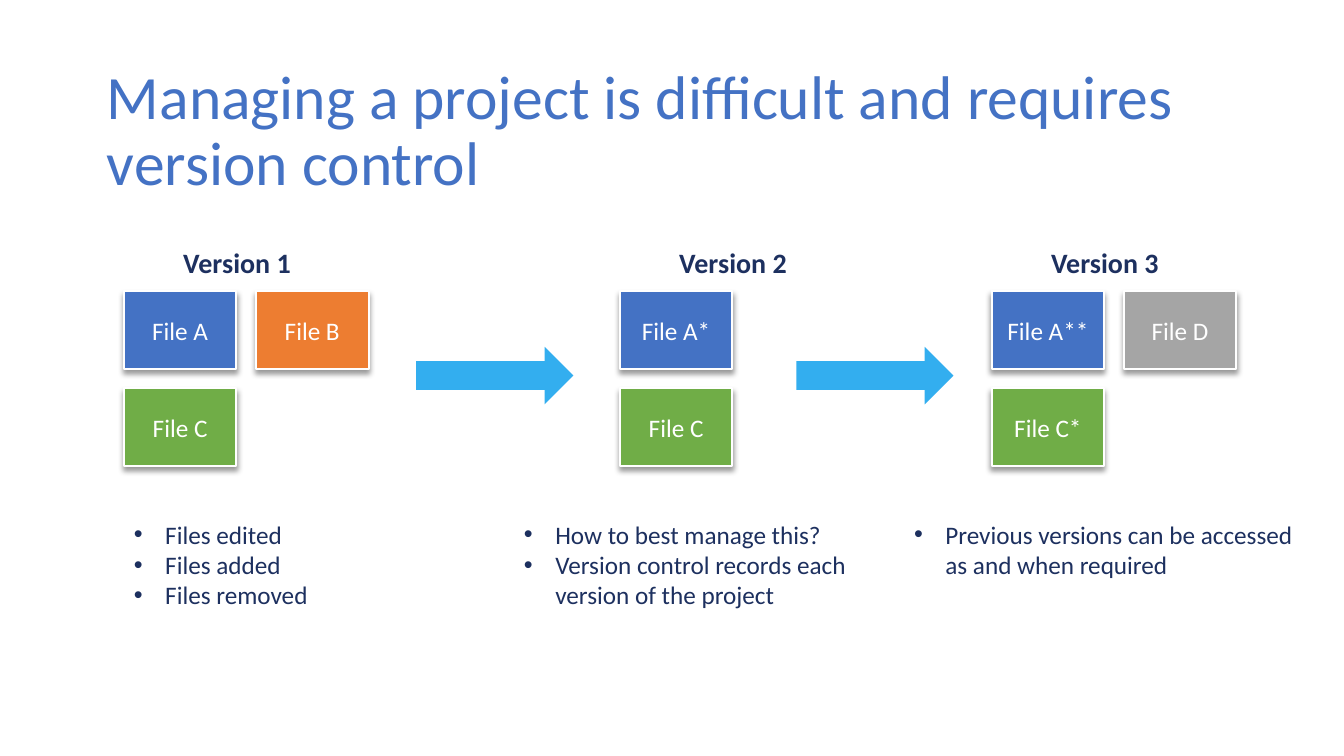
from lxml import etree
from pptx import Presentation
from pptx import util as u
from pptx.dml.color import RGBColor
from pptx.enum import shapes, text
from pptx.oxml.ns import qn

COLORS = {
    "blue": "4472C4", "orange": "ED7D31", "green": "70AD47", "grey": "A5A5A5",
    "arrow": "33AEEF", "navy": "1D305F", "white": "FFFFFF", "shadow": "000000",
}
FONT = "Calibri"
FILE_TOP, FILE_WIDTH, FILE_HEIGHT = 7.34, 2.84, 1.96
COLUMN_STEP, ROW_STEP = 3.33, 2.44

VERSIONS = [
    (3.12, "Version 1", [("File A", "blue", 0, 0), ("File B", "orange", 1, 0),
                         ("File C", "green", 0, 1)]),
    (15.62, "Version 2", [("File A*", "blue", 0, 0), ("File C", "green", 0, 1)]),
    (24.99, "Version 3", [("File A**", "blue", 0, 0), ("File D", "grey", 1, 0),
                          ("File C*", "green", 0, 1)]),
]
ARROW_LEFTS = [10.49, 20.07]
POINTS = [
    "Files edited", "Files added", "Files removed", "How to best manage this?",
    "Version control records each version of the project",
    "Previous versions can be accessed as and when required",
]


def rgb(name):
    return RGBColor.from_string(COLORS[name])


def box(*lengths):
    return [u.Cm(length) for length in lengths]


def place(shape, *lengths):
    shape.left, shape.top, shape.width, shape.height = box(*lengths)


def style(paragraph, size, color, align, bold=False):
    paragraph.alignment = align
    font = paragraph.font
    font.name, font.size, font.bold = FONT, u.Pt(size), bold
    font.color.rgb = rgb(color)


def add_title(slide, words):
    title = slide.shapes.title
    place(title, 2.44, 1.5, 29.21, 3.68)
    frame = title.text_frame
    frame.text = words
    frame.auto_size = text.MSO_AUTO_SIZE.NONE
    frame.vertical_anchor = text.MSO_ANCHOR.MIDDLE
    paragraph = frame.paragraphs[0]
    paragraph.line_spacing = 0.9
    style(paragraph, 44, "blue", text.PP_ALIGN.LEFT)


def add_shadow(shape):
    shape.shadow.inherit = False
    effects = shape._element.spPr.find(qn("a:effectLst"))
    shadow = etree.SubElement(
        effects, qn("a:outerShdw"), blurRad=str(u.Pt(4)), dist=str(u.Pt(3)),
        dir="5400000", algn="ctr", rotWithShape="0")
    color = etree.SubElement(shadow, qn("a:srgbClr"), val=COLORS["shadow"])
    etree.SubElement(color, qn("a:alpha"), val="40000")


def add_file(slide, left, top, name, color):
    shape = slide.shapes.add_shape(
        shapes.MSO_SHAPE.RECTANGLE, *box(left, top, FILE_WIDTH, FILE_HEIGHT))
    shape.fill.solid()
    shape.fill.fore_color.rgb = rgb(color)
    shape.line.color.rgb = rgb("white")
    shape.line.width = u.Pt(1.5)
    add_shadow(shape)
    frame = shape.text_frame
    frame.text = name
    frame.vertical_anchor = text.MSO_ANCHOR.MIDDLE
    style(frame.paragraphs[0], 18, "white", text.PP_ALIGN.CENTER)


def add_version(slide, left, label, files):
    for name, color, column, row in files:
        add_file(slide, left + column * COLUMN_STEP, FILE_TOP + row * ROW_STEP, name, color)
    frame = slide.shapes.add_textbox(*box(left + 1.04, 6.07, 3.63, 1.12)).text_frame
    frame.word_wrap = True
    frame.text = label
    style(frame.paragraphs[0], 20, "navy", text.PP_ALIGN.CENTER, bold=True)


def add_arrow(slide, left):
    arrow = slide.shapes.add_shape(
        shapes.MSO_SHAPE.RIGHT_ARROW, *box(left, 8.74, 3.96, 1.45))
    arrow.fill.solid()
    arrow.fill.fore_color.rgb = rgb("arrow")
    arrow.line.fill.background()
    arrow.shadow.inherit = False


def add_bullet(paragraph):
    properties = paragraph._p.get_or_add_pPr()
    indent = u.Cm(0.79)
    properties.set("marL", str(indent))
    properties.set("indent", str(-indent))
    etree.SubElement(properties, qn("a:buFont"), typeface="Arial")
    etree.SubElement(properties, qn("a:buChar"), char="•")


def add_points(slide, points):
    body = slide.placeholders[1]
    place(body, 3.12, 12.95, 30, 3.33)
    frame = body.text_frame
    frame.text = "\n".join(points)
    frame.auto_size = text.MSO_AUTO_SIZE.SHAPE_TO_FIT_TEXT
    frame.vertical_anchor = text.MSO_ANCHOR.TOP
    frame._txBody.bodyPr.set("numCol", "3")
    for paragraph in frame.paragraphs:
        add_bullet(paragraph)
        paragraph.space_before = u.Pt(0)
        paragraph.line_spacing = 1.0
        style(paragraph, 18, "navy", text.PP_ALIGN.LEFT)


def main():
    presentation = Presentation()
    presentation.slide_width, presentation.slide_height = box(33.87, 19.05)
    slide = presentation.slides.add_slide(presentation.slide_layouts[1])
    add_title(slide, "Managing a project is difficult and requires version control")
    for left, label, files in VERSIONS:
        add_version(slide, left, label, files)
    for left in ARROW_LEFTS:
        add_arrow(slide, left)
    add_points(slide, POINTS)
    presentation.save("out.pptx")


if __name__ == "__main__":
    main()
